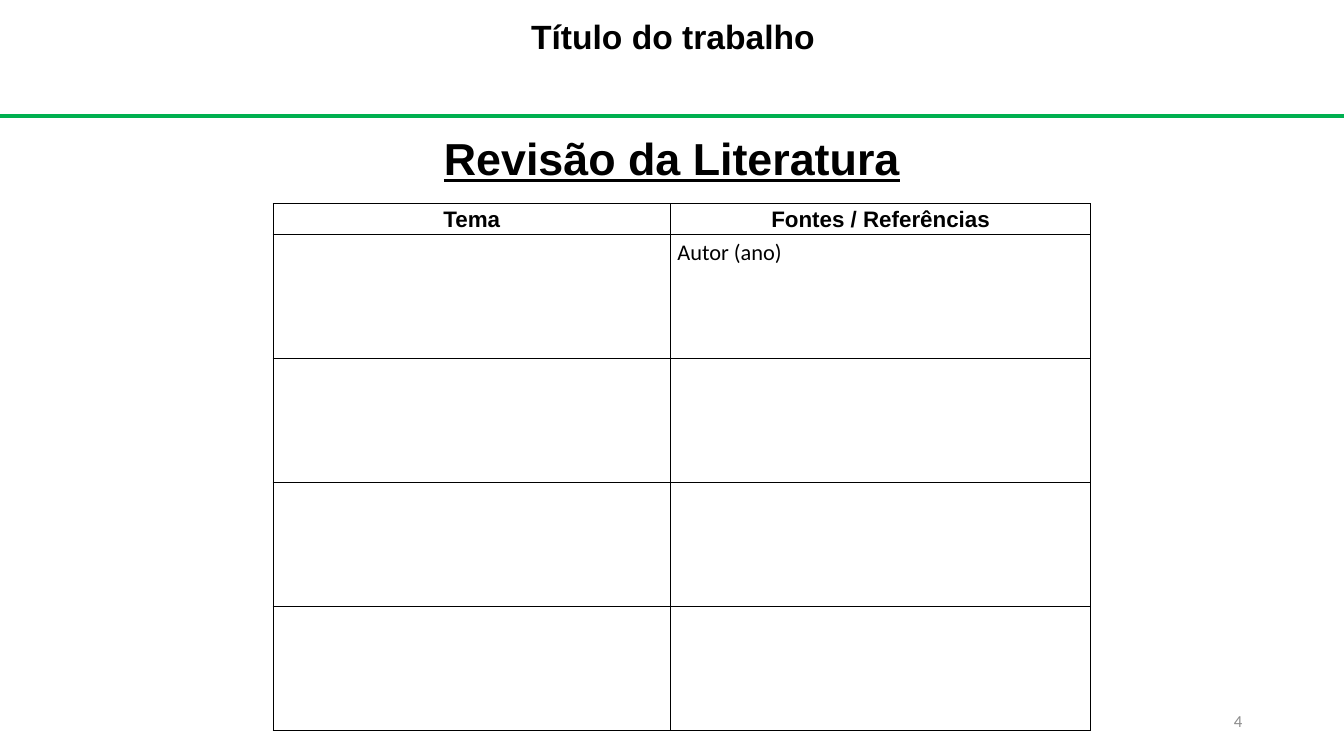
"""Build the literature review slide."""
import lxml.etree
import pptx
import pptx.dml.color
import pptx.enum.shapes
import pptx.enum.text
import pptx.oxml.ns
import pptx.util

Inches = pptx.util.Inches
ALIGN = pptx.enum.text.PP_ALIGN
ANCHOR = pptx.enum.text.MSO_ANCHOR
qn = pptx.oxml.ns.qn

WIDTH, HEIGHT = 13.33, 7.5
BLACK, GREEN, GRAY = "000000", "00B050", "8C8C8C"
HEADING = {"name": "Arial", "bold": True}
COLUMNS = [3.94, 4.17]
ROWS = [0.31] + [1.23] * 4
CELLS = {
    (0, 0): ("Tema", ALIGN.CENTER, HEADING),
    (0, 1): ("Fontes / Referências", ALIGN.CENTER, HEADING),
    (1, 1): ("Autor (ano)", ALIGN.LEFT, {"name": "Calibri", "bold": False}),
}


def rgb(color):
    """Turn a hex string into a colour."""
    return pptx.dml.color.RGBColor.from_string(color)


def write(tf, text, size, align, font, color=BLACK):
    """Write one formatted paragraph and return it."""
    p = tf.paragraphs[0]
    p.alignment = align
    r = p.add_run()
    r.text = text
    r.font.size = pptx.util.Pt(size)
    r.font.color.rgb = rgb(color)
    for key, value in font.items():
        setattr(r.font, key, value)
    return p


def add_text(s, box, text, size, align, font, color=BLACK, anchor=ANCHOR.TOP):
    """Place a line of text in the given box."""
    tf = s.shapes.add_textbox(*map(Inches, box)).text_frame
    tf.word_wrap = True
    tf.vertical_anchor = anchor
    write(tf, text, size, align, font, color)


def add_header(s, box):
    """Place the work title and the rule along the bottom of the box."""
    left, top, width, height = box
    bottom = top + height
    line = s.shapes.add_connector(
        pptx.enum.shapes.MSO_CONNECTOR.STRAIGHT,
        *map(Inches, (left, bottom, left + width, bottom)))
    line.line.color.rgb = rgb(GREEN)
    line.line.width = pptx.util.Pt(3)
    lxml.etree.SubElement(line._element.spPr, qn("a:effectLst"))
    add_text(s, (left + 2.3, top + 0.11, 8.75, 0.5), "Título do trabalho", 24,
             ALIGN.CENTER, HEADING)


def add_borders(cell, color=BLACK, width=1):
    """Draw a solid line on all four sides of a cell."""
    tcPr = cell._tc.get_or_add_tcPr()
    for side in ("lnL", "lnR", "lnT", "lnB"):
        ln = lxml.etree.SubElement(tcPr, qn(f"a:{side}"), w=str(pptx.util.Pt(width)))
        fill = lxml.etree.SubElement(ln, qn("a:solidFill"))
        lxml.etree.SubElement(fill, qn("a:srgbClr"), val=color)


def add_review_table(s, left, top):
    """Place the table of themes and references from its top left corner."""
    box = (left, top, sum(COLUMNS), sum(ROWS))
    table = s.shapes.add_table(len(ROWS), len(COLUMNS), *map(Inches, box)).table
    table.first_row = table.horz_banding = False
    for column, width in zip(table.columns, COLUMNS):
        column.width = Inches(width)
    for i, (row, height) in enumerate(zip(table.rows, ROWS)):
        row.height = Inches(height)
        for j, cell in enumerate(row.cells):
            cell.margin_left = cell.margin_right = Inches(0.07)
            cell.margin_top = cell.margin_bottom = 0
            add_borders(cell)
            cell.fill.background()
            if (i, j) in CELLS:
                text, align, font = CELLS[i, j]
                p = write(cell.text_frame, text, 16, align, font)
                p.line_spacing = 1.15


def add_review_slide(prs):
    """Build the literature review slide."""
    s = prs.slides.add_slide(prs.slide_layouts[6])
    add_header(s, (0, 0, WIDTH, 1.15))
    add_text(s, (1.94, 1.25, 9.45, 0.82), "Revisão da Literatura", 32,
             ALIGN.CENTER, {**HEADING, "underline": True})
    add_review_table(s, 2.71, 2.02)
    add_text(s, (9.42, 6.95, 3, 0.4), "4", 12, ALIGN.RIGHT,
             {"name": "Calibri"}, GRAY, ANCHOR.MIDDLE)


def main():
    """Create and save the presentation."""
    prs = pptx.Presentation()
    prs.slide_width, prs.slide_height = Inches(WIDTH), Inches(HEIGHT)
    add_review_slide(prs)
    prs.save("out.pptx")


if __name__ == "__main__":
    main()
